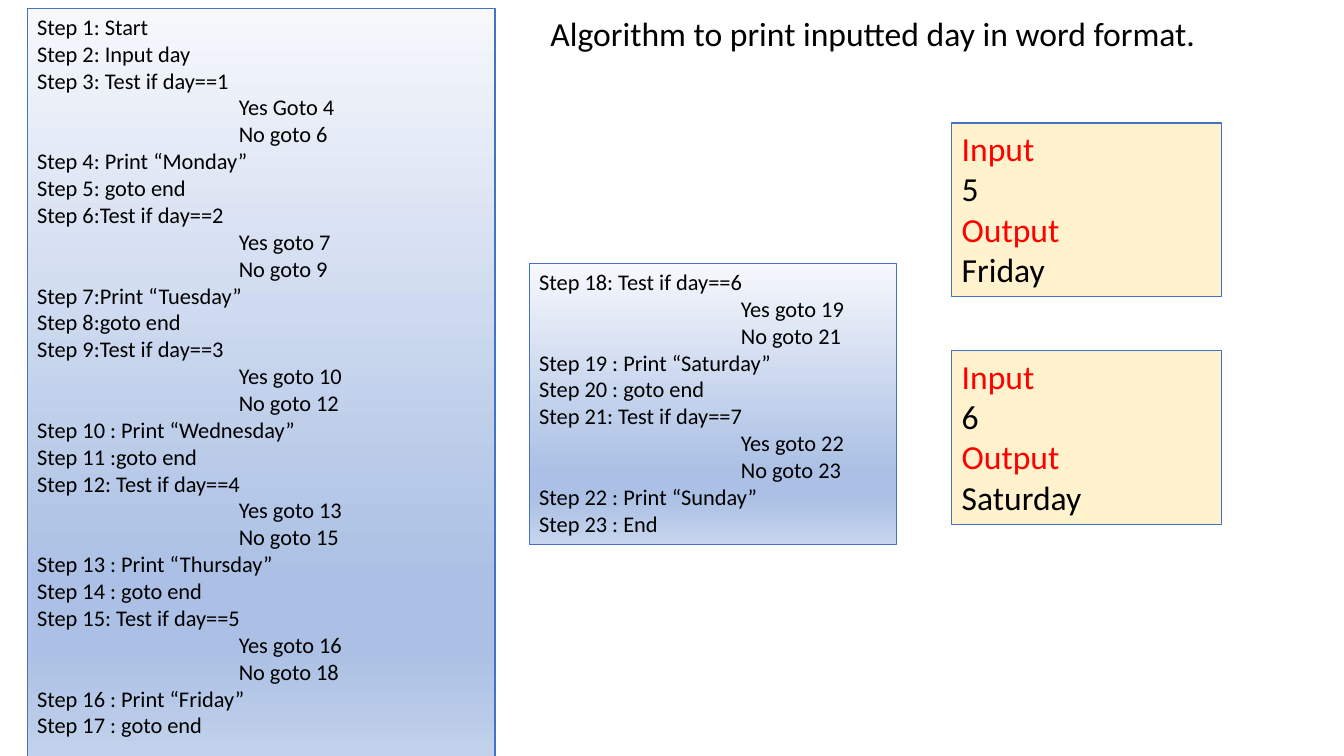
from lxml.etree import SubElement
from pptx import Presentation
from pptx.dml.color import RGBColor
from pptx.enum.shapes import MSO_SHAPE
from pptx.enum.text import MSO_ANCHOR, MSO_AUTO_SIZE, PP_ALIGN
from pptx.oxml.ns import qn
from pptx.util import Inches, Pt

# Content: a step is (text, *branches), branches being indented below it
TITLE = "Algorithm to print inputted day in word format."
WEEKDAY_STEPS = [
    ("Step 1: Start",),
    ("Step 2: Input day",),
    ("Step 3: Test if day==1", "Yes Goto 4", "No goto 6"),
    ("Step 4: Print “Monday”",),
    ("Step 5: goto end",),
    ("Step 6:Test if day==2", "Yes goto 7", "No goto 9"),
    ("Step 7:Print “Tuesday”",),
    ("Step 8:goto end",),
    ("Step 9:Test if day==3", "Yes goto 10", "No goto 12"),
    ("Step 10 : Print “Wednesday”",),
    ("Step 11 :goto end",),
    ("Step 12: Test if day==4", "Yes goto 13", "No goto 15"),
    ("Step 13 : Print “Thursday”",),
    ("Step 14 : goto end",),
    ("Step 15: Test if day==5", "Yes goto 16", "No goto 18"),
    ("Step 16 : Print “Friday”",),
    ("Step 17 : goto end",),
]
WEEKEND_STEPS = [
    ("Step 18: Test if day==6", "Yes goto 19", "No goto 21"),
    ("Step 19 : Print “Saturday”",),
    ("Step 20 : goto end",),
    ("Step 21: Test if day==7", "Yes goto 22", "No goto 23"),
    ("Step 22 : Print “Sunday”",),
    ("Step 23 : End",),
]
EXAMPLES = [("5", "Friday"), ("6", "Saturday")]

# Style
FONT = "Calibri"
BLACK, RED, BLUE, CREAM = "000000", "FF0000", "4472C4", "FFF2CC"
STEP_GRADIENT = [(0, "F6F8FC"), (74, "ABC0E4"), (83, "ABC0E4"), (100, "C7D5ED")]
BRANCH_INDENT = Inches(2)
EXAMPLE_TOP, EXAMPLE_PITCH = 1.22, 2.26


def rgb(value):
    return RGBColor.from_string(value)


def style_line(paragraph, size, color):
    paragraph.alignment = PP_ALIGN.LEFT
    paragraph.font.name = FONT
    paragraph.font.size = Pt(size)
    paragraph.font.color.rgb = rgb(color)


def fit_frame(frame):
    frame.word_wrap = True
    frame.vertical_anchor = MSO_ANCHOR.TOP
    frame.auto_size = MSO_AUTO_SIZE.SHAPE_TO_FIT_TEXT


def add_box(left, top, width, height, lines, size):
    """Add an outlined box; each line is (text, color, indent)."""
    box = slide.shapes.add_shape(
        MSO_SHAPE.RECTANGLE, Inches(left), Inches(top), Inches(width), Inches(height))
    box.shadow.inherit = False
    box.line.color.rgb = rgb(BLUE)
    box.line.width = Pt(0.75)
    frame = box.text_frame
    fit_frame(frame)
    for i, (text, color, indent) in enumerate(lines):
        line = frame.add_paragraph() if i else frame.paragraphs[0]
        line.text = text
        style_line(line, size, color)
        if indent:
            line._p.get_or_add_pPr().set("marL", str(indent))
    return box


def add_steps(left, top, width, height, steps):
    lines = [(text, BLACK, BRANCH_INDENT if i else 0)
             for step in steps for i, text in enumerate(step)]
    box = add_box(left, top, width, height, lines, 16)
    box.fill.gradient()
    box.fill.gradient_angle = 270
    stops = box._element.spPr.find(qn("a:gradFill")).find(qn("a:gsLst"))
    for stop in list(stops):
        stops.remove(stop)
    for percent, color in STEP_GRADIENT:
        stop = SubElement(stops, qn("a:gs"), pos=str(percent * 1000))
        SubElement(stop, qn("a:srgbClr"), val=color)


prs = Presentation()
prs.slide_width, prs.slide_height = Inches(13.33), Inches(7.5)
slide = prs.slides.add_slide(prs.slide_layouts[5])

# Title
title = slide.shapes.title
title.left, title.top = Inches(5.36), Inches(0.08)
title.width, title.height = Inches(6.79), Inches(0.5)
title.text_frame.text = TITLE
fit_frame(title.text_frame)
style_line(title.text_frame.paragraphs[0], 24, BLACK)

# Algorithm steps
add_steps(0.27, 0.08, 4.64, 7.64, WEEKDAY_STEPS)
add_steps(5.25, 2.61, 3.64, 2.79, WEEKEND_STEPS)

# Sample runs
for row, (day, word) in enumerate(EXAMPLES):
    lines = [("Input", RED, 0), (day, BLACK, 0), ("Output", RED, 0), (word, BLACK, 0)]
    example = add_box(9.44, EXAMPLE_TOP + row * EXAMPLE_PITCH, 2.68, 1.72, lines, 24)
    example.fill.solid()
    example.fill.fore_color.rgb = rgb(CREAM)

prs.save("out.pptx")
